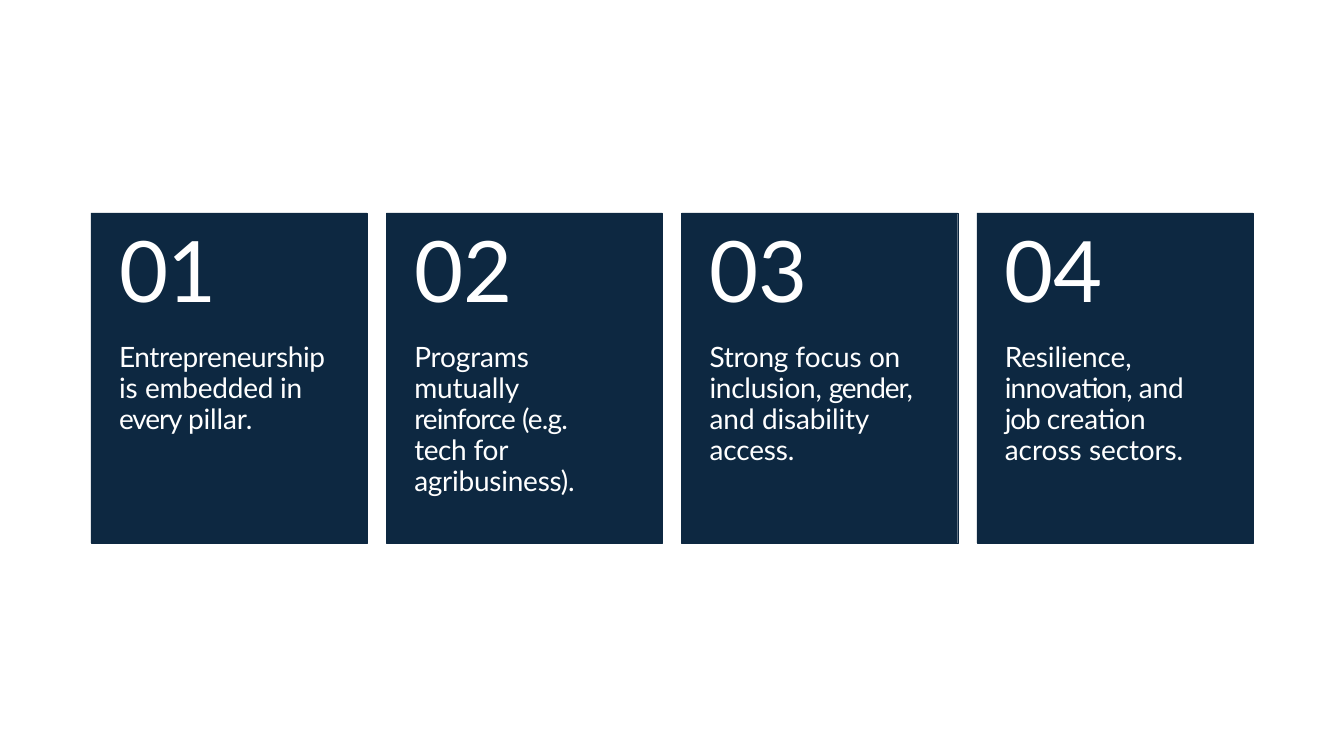
from dataclasses import dataclass

from pptx import Presentation
from pptx.dml.color import RGBColor
from pptx.enum.shapes import MSO_SHAPE
from pptx.enum.text import MSO_ANCHOR, PP_ALIGN
from pptx.util import Pt

CARDS = [
    ("01", 32, [("Entrepreneurship ", -0.3), ("is ", 0), ("embedded in ", -0.2),
                ("every ", -0.8), ("pillar.", -0.1)]),
    ("02", 56, [("Programs mutually ", -0.1), ("reinforce ", -0.7), ("(e.g. ", -0.6),
                ("tech ", -0.3), ("for agribusiness).", -0.2)]),
    ("03", 32, [("Strong ", -0.2), ("focus ", 0), ("on ", -0.3), ("inclusion, ", -0.2),
                ("gender, ", -0.8), ("and ", 0), ("disability access.", -0.1)]),
    ("04", 32, [("Resilience, ", -0.1), ("innovation, ", -0.6), ("and ", -0.2),
                ("job ", -0.8), ("creation ", -0.1), ("across ", 0), ("sectors.", -0.1)]),
]
NUMBER_TRACKING = -0.2

SLIDE_WIDTH, SLIDE_HEIGHT = 1344, 756
ROW_LEFT, ROW_TOP, ROW_WIDTH, ROW_HEIGHT = 91, 213, 1162, 330
CARD_GAP = 19
INSET_LEFT, INSET_TOP = 28, 5


@dataclass(frozen=True)
class Theme:
    card: RGBColor = RGBColor(0x0D, 0x28, 0x41)
    text: RGBColor = RGBColor(0xFF, 0xFF, 0xFF)
    font: str = "Lato"
    number_size: float = 60.5
    body_size: float = 20
    border: float = 0.25
    body_leading: float = 0.92
    body_space: float = 16.8


THEME = Theme()


def px(length):
    return round(length * 914400 / 100.8)


def add_run(paragraph, text, size, tracking):
    run = paragraph.add_run()
    run.text = text
    run.font.name = THEME.font
    run.font.size = Pt(size)
    run.font.color.rgb = THEME.text
    run._r.get_or_add_rPr().set("spc", str(round(tracking * 100)))


def add_card(slide, left, width, number, inset_right, phrases):
    shape = slide.shapes.add_shape(
        MSO_SHAPE.RECTANGLE, px(left), px(ROW_TOP), px(width), px(ROW_HEIGHT))
    shape.shadow.inherit = False
    shape.fill.solid()
    shape.fill.fore_color.rgb = THEME.card
    shape.line.color.rgb = THEME.card
    shape.line.width = Pt(THEME.border)

    frame = shape.text_frame
    frame.word_wrap = True
    frame.vertical_anchor = MSO_ANCHOR.TOP
    frame.margin_left, frame.margin_top = px(INSET_LEFT), px(INSET_TOP)
    frame.margin_right, frame.margin_bottom = px(inset_right), 0

    heading = frame.paragraphs[0]
    heading.alignment = PP_ALIGN.LEFT
    add_run(heading, number, THEME.number_size, NUMBER_TRACKING)

    body = frame.add_paragraph()
    body.alignment = PP_ALIGN.LEFT
    body.line_spacing = THEME.body_leading
    body.space_before = Pt(THEME.body_space)
    for text, tracking in phrases:
        add_run(body, text, THEME.body_size, tracking)


def main():
    presentation = Presentation()
    presentation.slide_width = px(SLIDE_WIDTH)
    presentation.slide_height = px(SLIDE_HEIGHT)
    slide = presentation.slides.add_slide(presentation.slide_layouts[6])

    card_width = (ROW_WIDTH - CARD_GAP * (len(CARDS) - 1)) / len(CARDS)
    for index, (number, inset_right, phrases) in enumerate(CARDS):
        left = ROW_LEFT + index * (card_width + CARD_GAP)
        add_card(slide, left, card_width, number, inset_right, phrases)

    presentation.save("out.pptx")


if __name__ == "__main__":
    main()
